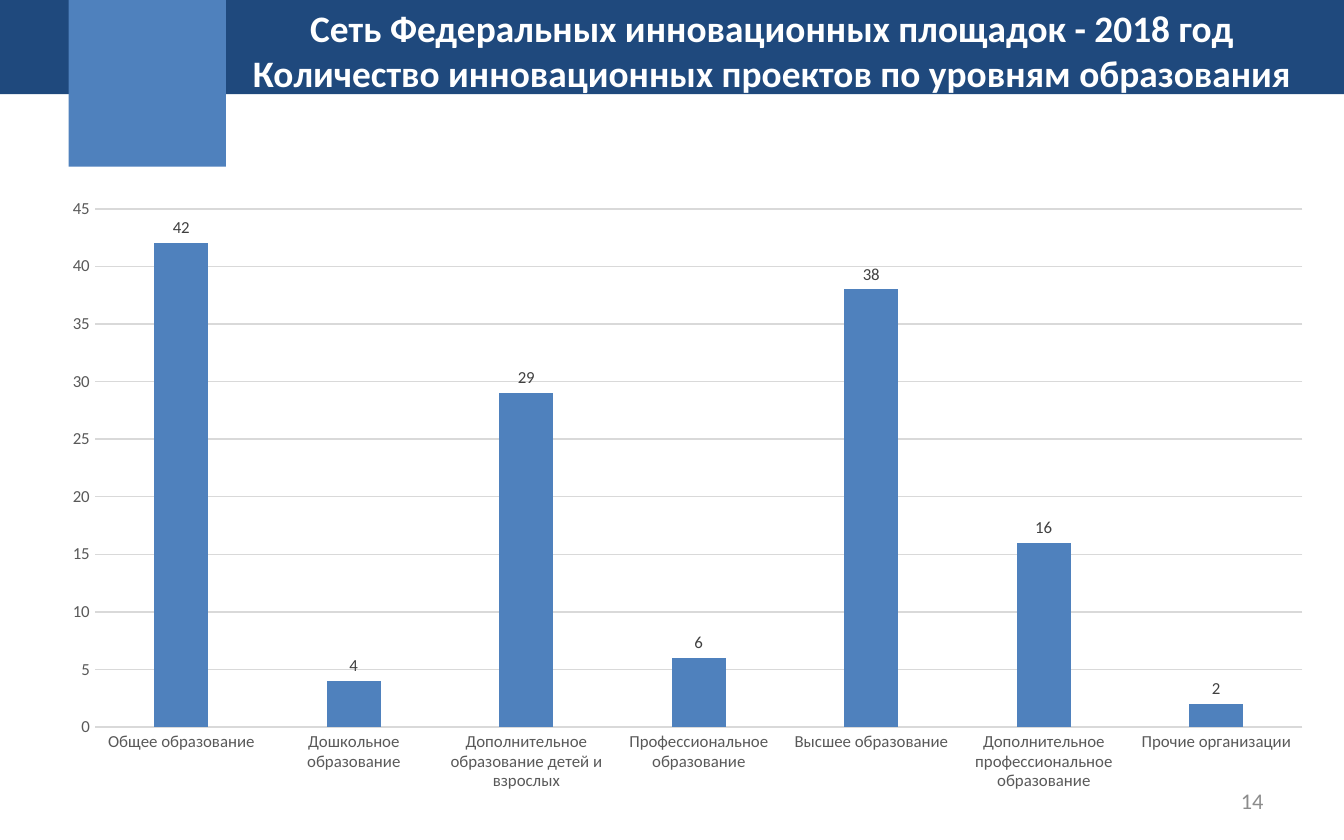
"""Build a slide with a column chart of innovation projects by level of education."""
from dataclasses import dataclass

from pptx import Presentation
from pptx.chart.data import CategoryChartData
from pptx.dml.color import RGBColor
from pptx.enum.chart import XL_CHART_TYPE, XL_LABEL_POSITION, XL_TICK_MARK
from pptx.enum.shapes import MSO_SHAPE
from pptx.enum.text import MSO_ANCHOR, PP_ALIGN
from pptx.util import Cm, Pt

COLUMNS = XL_CHART_TYPE.COLUMN_CLUSTERED
OUTSIDE_END = XL_LABEL_POSITION.OUTSIDE_END
NO_TICK = XL_TICK_MARK.NONE
RECTANGLE = MSO_SHAPE.RECTANGLE
TOP, MIDDLE = MSO_ANCHOR.TOP, MSO_ANCHOR.MIDDLE
CENTER, RIGHT = PP_ALIGN.CENTER, PP_ALIGN.RIGHT

TITLE = ("Сеть Федеральных инновационных площадок - 2018 год "
         "Количество инновационных проектов по уровням образования")
PAGE_NUMBER = "14"
SERIES_NAME = "Количество проектов"
PROJECTS = [
    ("Общее образование", 42),
    ("Дошкольное образование", 4),
    ("Дополнительное образование детей и взрослых", 29),
    ("Профессиональное образование", 6),
    ("Высшее образование", 38),
    ("Дополнительное профессиональное образование", 16),
    ("Прочие организации", 2),
]

PAGE_SIZE = (25.4, 15.88)
BAND_AREA = (0, 0, 25.4, 1.78)
BLOCK_AREA = (1.3, 0, 2.97, 3.15)
NUMBER_AREA = (18.21, 14.71, 5.92, 0.84)
TITLE_AREA = (4.09, -0.03, 21.01, 1.96)
CHART_AREA = (0.89, 3.53, 24.21, 11.66)


@dataclass(frozen=True)
class Theme:
    """Colours, font and type sizes."""
    font: str = "Calibri"
    navy: str = "1F497D"
    blue: str = "4F81BD"
    white: str = "FFFFFF"
    muted: str = "8C8C8C"
    axis_text: str = "595959"
    label_text: str = "404040"
    rule: str = "D9D9D9"
    title_size: float = 20
    number_size: float = 12
    chart_size: float = 9
    rule_width: float = 0.75


THEME = Theme()


def rgb(color):
    """Turn a hex string into a colour."""
    return RGBColor.from_string(color)


def lengths(area):
    """Turn centimetre numbers into lengths."""
    return [Cm(value) for value in area]


def style_font(font, size, color, bold=False):
    """Set the font face, size, colour and weight."""
    font.name, font.size, font.bold = THEME.font, Pt(size), bold
    font.color.rgb = rgb(color)


def style_rule(line):
    """Give a chart line the thin grey look."""
    line.color.rgb = rgb(THEME.rule)
    line.width = Pt(THEME.rule_width)


def add_block(page, area, color):
    """Add a plain filled rectangle."""
    block = page.shapes.add_shape(RECTANGLE, *lengths(area))
    block.shadow.inherit = False
    block.fill.solid()
    block.fill.fore_color.rgb = rgb(color)
    block.line.fill.background()


def add_text(page, area, text, size, color, align, anchor, bold=False):
    """Add a wrapped text box with one paragraph."""
    box = page.shapes.add_textbox(*lengths(area))
    frame = box.text_frame
    frame.word_wrap = True
    frame.vertical_anchor = anchor
    para = frame.paragraphs[0]
    para.alignment = align
    span = para.add_run()
    span.text = text
    style_font(span.font, size, color, bold)


def add_projects_chart(page):
    """Add the column chart with its axes and labels."""
    data = CategoryChartData()
    data.categories = [level for level, _ in PROJECTS]
    data.add_series(SERIES_NAME, [count for _, count in PROJECTS])
    chart = page.shapes.add_chart(COLUMNS, *lengths(CHART_AREA), data).chart
    chart.has_legend = False
    chart.has_title = False
    style_font(chart.font, THEME.chart_size, THEME.axis_text)

    for axis in (chart.category_axis, chart.value_axis):
        axis.major_tick_mark = axis.minor_tick_mark = NO_TICK
        style_font(axis.tick_labels.font, THEME.chart_size, THEME.axis_text)
    style_rule(chart.category_axis.format.line)
    values = chart.value_axis
    values.minimum_scale, values.maximum_scale, values.major_unit = 0, 45, 5
    values.format.line.fill.background()
    values.has_major_gridlines = True
    style_rule(values.major_gridlines.format.line)

    plot = chart.plots[0]
    plot.gap_width, plot.overlap = 219, -27
    plot.vary_by_categories = False
    fill = plot.series[0].format.fill
    fill.solid()
    fill.fore_color.rgb = rgb(THEME.blue)
    plot.has_data_labels = True
    labels = plot.data_labels
    labels.show_value = True
    labels.position = OUTSIDE_END
    style_font(labels.font, THEME.chart_size, THEME.label_text)


def main():
    """Build and save the deck."""
    deck = Presentation()
    deck.slide_width, deck.slide_height = lengths(PAGE_SIZE)
    page = deck.slides.add_slide(deck.slide_layouts[6])
    add_block(page, BAND_AREA, THEME.navy)
    add_block(page, BLOCK_AREA, THEME.blue)
    add_text(page, NUMBER_AREA, PAGE_NUMBER, THEME.number_size, THEME.muted, RIGHT, MIDDLE)
    add_text(page, TITLE_AREA, TITLE, THEME.title_size, THEME.white, CENTER, TOP, bold=True)
    add_projects_chart(page)
    deck.save("out.pptx")


if __name__ == "__main__":
    main()
